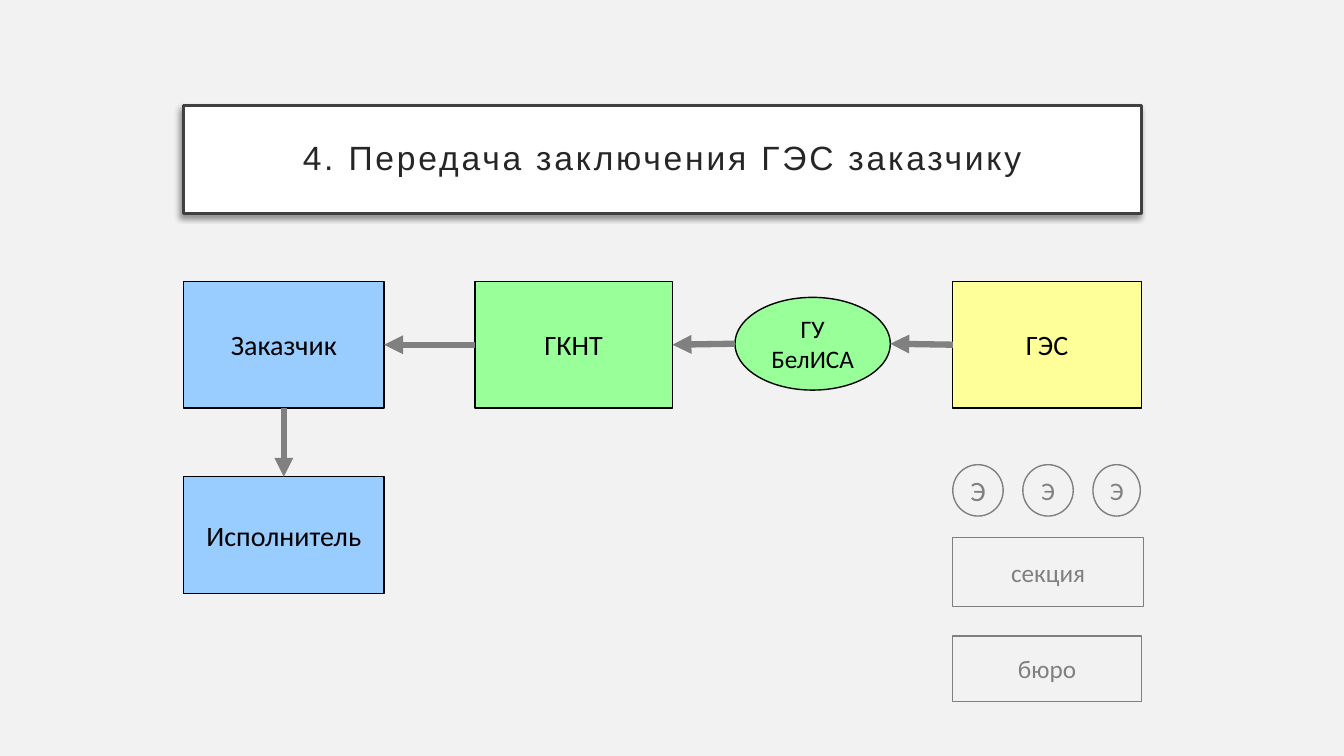
import pptx
import pptx.dml.color
import pptx.enum.shapes
import pptx.enum.text
import pptx.oxml
import pptx.oxml.ns
import pptx.util

WIDTH, HEIGHT = 13.33, 7.5
LEFT, RIGHT = 1.82, 11.32
CHAIN_TOP, CHAIN_HEIGHT = 2.79, 1.26
CHAIN_MIDDLE = CHAIN_TOP + CHAIN_HEIGHT / 2
GES_LEFT = 9.45
CLIENT_WIDTH, GES_WIDTH = 1.99, RIGHT - GES_LEFT
EXPERT_TOP, EXPERT_HEIGHT, EXPERT_STEP = 4.61, 0.51, 0.695
BLUE, GREEN, YELLOW = "99CCFF", "99FF99", "FFFF99"
BLACK, GRAY = "000000", "808080"

TITLE = "4. Передача заключения ГЭС заказчику"
BOXES = [
    ("Заказчик", LEFT, CHAIN_TOP, CLIENT_WIDTH, CHAIN_HEIGHT, BLUE, BLACK, 20),
    ("ГКНТ", 4.71, CHAIN_TOP, 1.96, CHAIN_HEIGHT, GREEN, BLACK, 20),
    ("Исполнитель", LEFT, 4.73, CLIENT_WIDTH, 1.16, BLUE, BLACK, 20),
    ("ГЭС", GES_LEFT, CHAIN_TOP, GES_WIDTH, CHAIN_HEIGHT, YELLOW, BLACK, 20),
    ("секция", GES_LEFT, 5.33, 1.89, 0.69, None, GRAY, 18),
    ("бюро", GES_LEFT, 6.31, GES_WIDTH, 0.65, None, GRAY, 18),
]
INSTITUTE = ("ГУ БелИСА", 7.29, 2.95, 1.54, 0.92, GREEN, BLACK, 18)
EXPERTS = [("Э", 0.5, 20), ("Э", 0.5, 18), ("Э", 0.47, 18)]
TOP, SIDE_LEFT, BOTTOM, SIDE_RIGHT = range(4)

SHADOW = (
    '<a:effectLst %s><a:outerShdw blurRad="50800" dist="38100" dir="8100000" algn="tr" rotWithShape="0">'
    '<a:srgbClr val="000000"><a:alpha val="40000"/></a:srgbClr></a:outerShdw></a:effectLst>'
)
NO_EFFECT = "<a:effectLst %s/>"
ARROWHEAD = '<a:tailEnd %s type="triangle"/>'

inches = pptx.util.Inches
shape_kind = pptx.enum.shapes.MSO_SHAPE


def color(value):
    return pptx.dml.color.RGBColor.from_string(value)


def append_xml(parent, template):
    parent.append(pptx.oxml.parse_xml(template % pptx.oxml.ns.nsdecls("a")))


def paint(shape, fill, line, line_width):
    if fill:
        shape.fill.solid()
        shape.fill.fore_color.rgb = color(fill)
    else:
        shape.fill.background()
    shape.line.color.rgb = color(line)
    shape.line.width = pptx.util.Pt(line_width)


def write(shape, text, size, font, text_color):
    frame = shape.text_frame
    frame.word_wrap = True
    frame.auto_size = pptx.enum.text.MSO_AUTO_SIZE.NONE
    frame.vertical_anchor = pptx.enum.text.MSO_ANCHOR.MIDDLE
    paragraph = frame.paragraphs[0]
    paragraph.alignment = pptx.enum.text.PP_ALIGN.CENTER
    run = paragraph.add_run()
    run.text = text
    run.font.size = pptx.util.Pt(size)
    run.font.name = font
    run.font.color.rgb = color(text_color)
    return paragraph, run


def add_title(slide):
    title = slide.shapes.title
    title.left, title.top = inches(LEFT), inches(1.05)
    title.width, title.height = inches(RIGHT - LEFT), inches(1.07)
    paint(title, "FFFFFF", "404040", 2.25)
    append_xml(title._element.spPr, SHADOW)
    paragraph, run = write(title, TITLE, 24, "Arial", "262626")
    paragraph.line_spacing = 0.9
    run._r.get_or_add_rPr().set("spc", "200")
    frame = title.text_frame
    frame.margin_left = frame.margin_right = inches(0.2)
    frame.margin_top = frame.margin_bottom = inches(0.2)


def add_node(slide, kind, text, left, top, width, height, fill, ink, size):
    shape = slide.shapes.add_shape(kind, inches(left), inches(top), inches(width), inches(height))
    shape.shadow.inherit = False
    paint(shape, fill, ink, 1)
    write(shape, text, size, "Calibri", ink)
    return shape


def add_arrow(slide, start, end, source=None, target=None):
    arrow = slide.shapes.add_connector(
        pptx.enum.shapes.MSO_CONNECTOR.STRAIGHT, *[inches(value) for value in (*start, *end)]
    )
    arrow.line.color.rgb = color(GRAY)
    arrow.line.width = pptx.util.Pt(4.5)
    append_xml(arrow.line._get_or_add_ln(), ARROWHEAD)
    append_xml(arrow._element.spPr, NO_EFFECT)
    if source:
        arrow.begin_connect(*source)
    if target:
        arrow.end_connect(*target)


def main():
    presentation = pptx.Presentation()
    presentation.slide_width, presentation.slide_height = inches(WIDTH), inches(HEIGHT)
    slide = presentation.slides.add_slide(presentation.slide_layouts[5])
    slide.background.fill.solid()
    slide.background.fill.fore_color.rgb = color("F2F2F2")
    add_title(slide)

    boxes = {box[0]: add_node(slide, shape_kind.RECTANGLE, *box) for box in BOXES}
    add_node(slide, shape_kind.OVAL, *INSTITUTE)
    for index, (text, width, size) in enumerate(EXPERTS):
        left = GES_LEFT + index * EXPERT_STEP
        add_node(slide, shape_kind.OVAL, text, left, EXPERT_TOP, width, EXPERT_HEIGHT, None, GRAY, size)

    client, committee = boxes["Заказчик"], boxes["ГКНТ"]
    institute_left, institute_top, institute_width, institute_height = INSTITUTE[1:5]
    institute_middle = institute_top + institute_height / 2
    add_arrow(slide, (GES_LEFT, CHAIN_MIDDLE), (institute_left + institute_width, institute_middle),
              source=(boxes["ГЭС"], SIDE_LEFT))
    add_arrow(slide, (institute_left, institute_middle), (6.67, CHAIN_MIDDLE),
              target=(committee, SIDE_RIGHT))
    add_arrow(slide, (4.71, CHAIN_MIDDLE), (LEFT + CLIENT_WIDTH, CHAIN_MIDDLE),
              (committee, SIDE_LEFT), (client, SIDE_RIGHT))
    client_center = LEFT + CLIENT_WIDTH / 2
    add_arrow(slide, (client_center, CHAIN_TOP + CHAIN_HEIGHT), (client_center, 4.73),
              (client, BOTTOM), (boxes["Исполнитель"], TOP))
    presentation.save("out.pptx")


if __name__ == "__main__":
    main()
